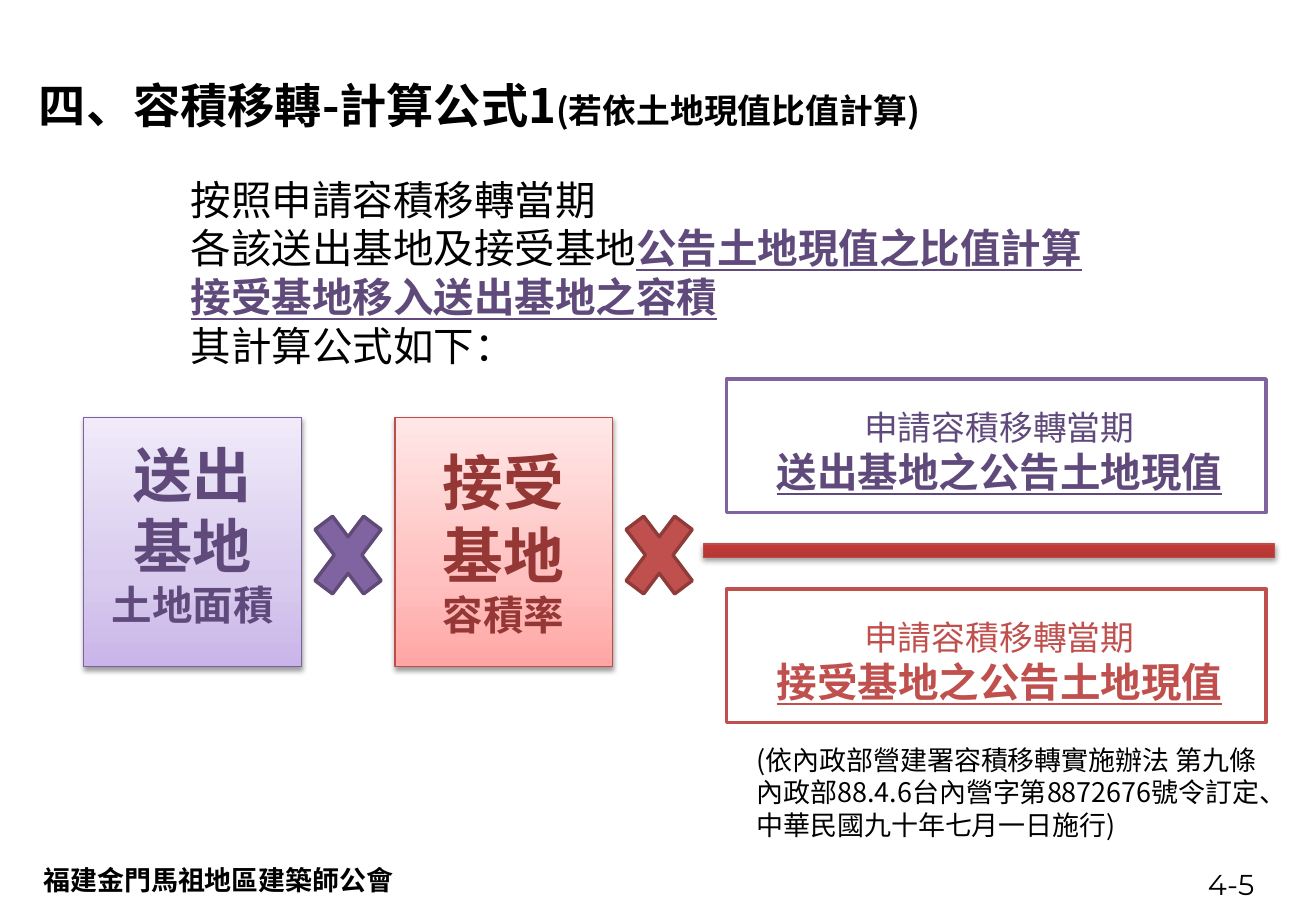
import copy

from lxml import etree
from pptx import Presentation
from pptx import util as u
from pptx.dml.color import RGBColor
from pptx.enum import shapes, text
from pptx.oxml import ns

BLACK = RGBColor(0x00, 0x00, 0x00)
WHITE = RGBColor(0xFF, 0xFF, 0xFF)
PURPLE = RGBColor(0x80, 0x64, 0xA2)
PURPLE_TEXT = RGBColor(0x60, 0x4A, 0x7B)
PURPLE_EDGE = RGBColor(0x5F, 0x4A, 0x78)
PURPLE_LINE = RGBColor(0x7D, 0x60, 0xA0)
RED = RGBColor(0xC0, 0x50, 0x4D)
RED_TEXT = RGBColor(0x95, 0x37, 0x35)
RED_EDGE = RGBColor(0x8E, 0x3B, 0x39)
RED_LINE = RGBColor(0xBF, 0x4C, 0x48)
PURPLE_FADE = [(0, RGBColor(0xC9, 0xB5, 0xE8)), (0.35, RGBColor(0xD8, 0xCB, 0xEE)),
               (1, RGBColor(0xF0, 0xEA, 0xF9))]
RED_FADE = [(0, RGBColor(0xFF, 0xA6, 0xA5)), (0.35, RGBColor(0xFF, 0xC0, 0xBF)),
            (1, RGBColor(0xFF, 0xE7, 0xE7))]
BAR_FADE = [(0, RGBColor(0x9C, 0x2F, 0x2D)), (0.8, RGBColor(0xCB, 0x3E, 0x3A)),
            (1, RGBColor(0xCE, 0x3B, 0x37))]
CJK = "Noto Sans CJK SC"

# Grid of the formula, in inches
FACTOR_LEFT, FACTOR_STEP, FACTOR_WIDTH = 0.69, 2.56, 1.79
CARD_TOP, CARD_HEIGHT = 3.44, 2.05
TIMES_TOP, TIMES_WIDTH, TIMES_HEIGHT = 4.06, 0.77, 1.02
TERM_LEFT, TERM_TOP, TERM_STEP = 5.98, 3.12, 1.73
TERM_WIDTH, TERM_HEIGHT = 4.44, 1.1

deck = Presentation()
deck.slide_width, deck.slide_height = u.Inches(10.83), u.Inches(7.5)
page = deck.slides.add_slide(deck.slide_layouts[5])


def add_block(kind, place, fill, line, width):
    """Add a preset shape; a list of stops as fill gives a gradient and a soft shadow."""
    block = page.shapes.add_shape(kind, *map(u.Inches, place))
    block.shadow.inherit = False
    block.line.color.rgb, block.line.width = line, u.Pt(width)
    if not isinstance(fill, list):
        block.fill.solid()
        block.fill.fore_color.rgb = fill
        return
    block.fill.gradient()
    block.fill.gradient_angle = 90
    stops = block._element.spPr.find(".//" + ns.qn("a:gsLst"))
    stops.append(copy.deepcopy(stops[0]))
    for stop, (position, color) in zip(block.fill.gradient_stops, fill):
        stop.position, stop.color.rgb = position, color
    effects = block._element.spPr.find(ns.qn("a:effectLst"))
    shadow = etree.SubElement(effects, ns.qn("a:outerShdw"), blurRad=str(u.Pt(3.1)),
                              dist=str(u.Pt(1.6)), dir="5400000", rotWithShape="0")
    shade = etree.SubElement(shadow, ns.qn("a:srgbClr"), val="000000")
    etree.SubElement(shade, ns.qn("a:alpha"), val="38000")


def write(place, paragraphs, box=None, align=text.PP_ALIGN.LEFT, **frame_format):
    """Fill a text box with paragraphs, each a list of (text, size, colour, font format)."""
    if box is None:
        box = page.shapes.add_textbox(*map(u.Inches, place))
    else:
        box.left, box.top, box.width, box.height = map(u.Inches, place)
    frame = box.text_frame
    settings = {"word_wrap": True, "auto_size": text.MSO_AUTO_SIZE.NONE,
                "vertical_anchor": text.MSO_ANCHOR.TOP, **frame_format}
    for name, value in settings.items():
        setattr(frame, name, value)
    for index, spans in enumerate(paragraphs):
        para = frame.add_paragraph() if index else frame.paragraphs[0]
        para.alignment = align
        for words, size, color, style in spans:
            span = para.add_run()
            span.text = words
            span.font.color.rgb = color
            for name, value in {"name": CJK, "size": u.Pt(size), **style}.items():
                setattr(span.font, name, value)
            latin = span.font._element.find(ns.qn("a:latin"))
            latin.addnext(latin.makeelement(ns.qn("a:ea"), {"typeface": CJK}))


BOLD = {"bold": True}
KEY = {"bold": True, "underline": True}
CENTER = text.PP_ALIGN.CENTER

write((0.22, 0.58, 8.7, 0.57),
      [[("四、容積移轉-計算公式1", 28, BLACK, BOLD), ("(若依土地現值比值計算)", 20, BLACK, BOLD)]],
      box=page.shapes.title)
write((1.47, 1.39, 7.55, 1.72), [
    [("按照申請容積移轉當期", 24, BLACK, {})],
    [("各該送出基地及接受基地", 24, BLACK, {}), ("公告土地現值之比值計算", 24, PURPLE_TEXT, KEY)],
    [("接受基地移入送出基地之容積", 24, PURPLE_TEXT, KEY)],
    [("其計算公式如下：", 24, BLACK, {})],
])

# Factors, each followed by a multiplication sign
factors = [(PURPLE_FADE, PURPLE_LINE, PURPLE, PURPLE_EDGE), (RED_FADE, RED_LINE, RED, RED_EDGE)]
for column, (fade, line, sign, edge) in enumerate(factors):
    left = FACTOR_LEFT + column * FACTOR_STEP
    add_block(shapes.MSO_SHAPE.RECTANGLE, (left, CARD_TOP, FACTOR_WIDTH, CARD_HEIGHT),
              fade, line, 0.75)
    add_block(shapes.MSO_SHAPE.MATH_MULTIPLY,
              (left + FACTOR_WIDTH, TIMES_TOP, TIMES_WIDTH, TIMES_HEIGHT), sign, edge, 2)
write((FACTOR_LEFT, 3.56, FACTOR_WIDTH, 1.68), [
    [("送出", 35, PURPLE_TEXT, BOLD)],
    [("基地", 35, PURPLE_TEXT, BOLD)],
    [("土地面積", 24, PURPLE_TEXT, BOLD)],
], align=CENTER)
write((3.42, 3.61, 1.45, 1.72),
      [[("接受基地", 36, RED_TEXT, BOLD), ("容積率", 24, RED_TEXT, BOLD)]], align=CENTER)

# Fraction
add_block(shapes.MSO_SHAPE.MATH_MINUS, (4.94, 4.3, 6.4, 0.47), BAR_FADE, RED_LINE, 0.75)
terms = [("送出基地之公告土地現值", PURPLE, PURPLE_TEXT), ("接受基地之公告土地現值", RED, RED)]
for row, (term, line, color) in enumerate(terms):
    top = TERM_TOP + row * TERM_STEP
    add_block(shapes.MSO_SHAPE.RECTANGLE, (TERM_LEFT, top, TERM_WIDTH, TERM_HEIGHT),
              WHITE, line, 2)
    write((5.71, top + 0.18, 5.03, 0.84),
          [[("申請容積移轉當期", 20, color, {})], [(term, 24, color, KEY)]], align=CENTER)

# Source note and footer
note = ["(依內政部營建署容積移轉實施辦法 第九條", "內政部88.4.6台內營字第8872676號令訂定、",
        "中華民國九十年七月一日施行)"]
write((6.13, 6.07, 4.87, 0.91), [[(words, 16, BLACK, {})] for words in note])
write((0.26, 7.06, 3.12, 0.37),
      [[("福建金門馬祖地區建築師公會", 16, BLACK, {"name": "Calibri", "bold": True})]],
      word_wrap=False)
write((9.94, 7.14, 0.6, 0.28), [[("4-5", 17, BLACK, {"name": "Montserrat"})]],
      word_wrap=False, vertical_anchor=text.MSO_ANCHOR.MIDDLE,
      margin_left=0, margin_right=0, margin_top=0, margin_bottom=0)

deck.save("out.pptx")
